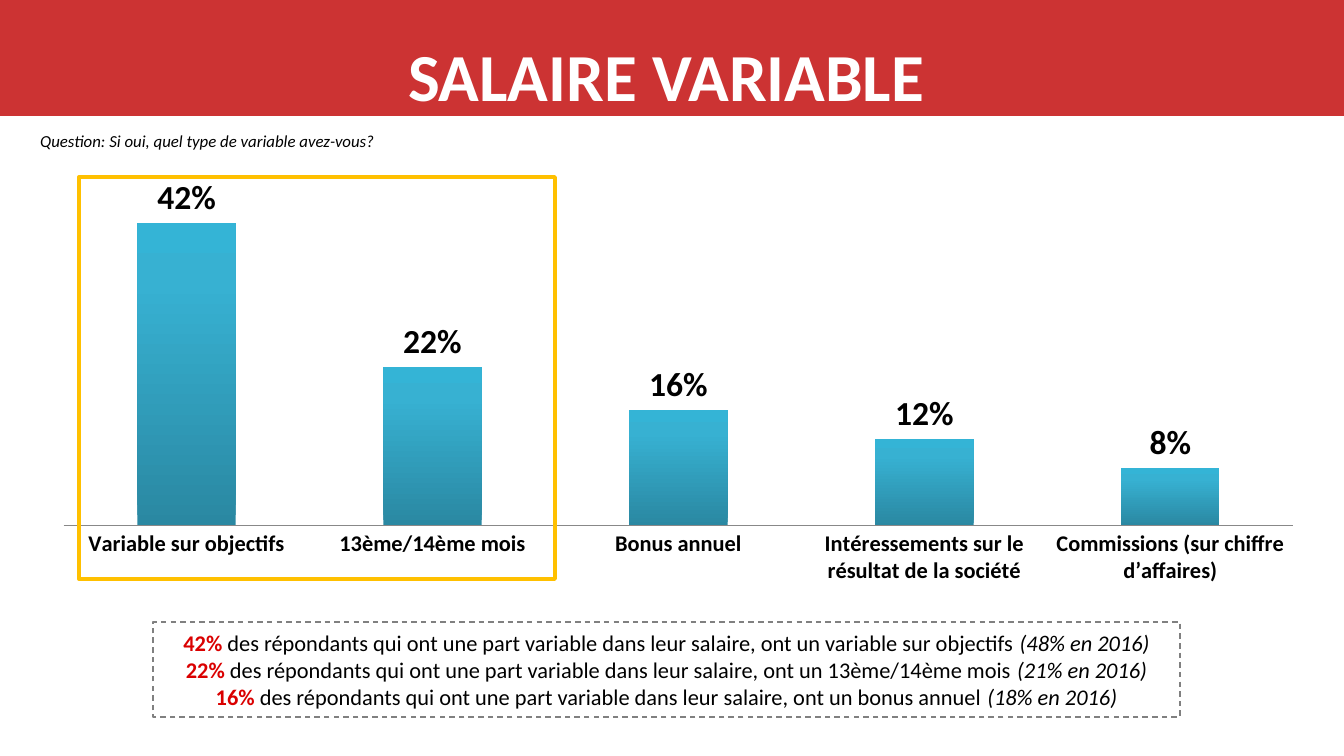
"""Build the slide on variable pay: a column chart with its key findings."""
import copy
from dataclasses import dataclass
from typing import Optional

import pptx
import pptx.chart.data
import pptx.dml.color
import pptx.enum.chart
import pptx.enum.dml
import pptx.enum.shapes
import pptx.enum.text
import pptx.oxml
import pptx.oxml.ns
import pptx.util

EMU_PER_PX = 914400 / 134.4
FONT = "Calibri"
RGBColor = pptx.dml.color.RGBColor
WHITE = RGBColor(0xFF, 0xFF, 0xFF)
BLACK = RGBColor(0x00, 0x00, 0x00)
BAND_RED = RGBColor(0xCC, 0x33, 0x33)
FIGURE_RED = RGBColor(0xDA, 0x00, 0x00)
GREY = RGBColor(0x80, 0x80, 0x80)
AXIS_GREY = RGBColor(0x88, 0x88, 0x88)
AMBER = RGBColor(0xFF, 0xC0, 0x00)
BAR_STOPS = (
    (0.0, RGBColor(0x2A, 0x88, 0xA2)),
    (0.8, RGBColor(0x37, 0xB1, 0xD2)),
    (1.0, RGBColor(0x34, 0xB4, 0xD6)),
)
CENTER = pptx.enum.text.PP_ALIGN.CENTER
LEFT = pptx.enum.text.PP_ALIGN.LEFT


@dataclass(frozen=True)
class Area:
    left: int
    top: int
    width: int
    height: int

    def emu(self) -> tuple:
        return tuple(px(v) for v in (self.left, self.top, self.width, self.height))


@dataclass(frozen=True)
class Finding:
    share: str
    statement: str
    earlier: str


SHARES = {
    "Variable sur objectifs": 0.42,
    "13ème/14ème mois": 0.22,
    "Bonus annuel": 0.16,
    "Intéressements sur le résultat de la société": 0.12,
    "Commissions (sur chiffre d’affaires)": 0.08,
}
COMMON_STATEMENT = "des répondants qui ont une part variable dans leur salaire, ont un "
FINDINGS = (
    Finding("42%", "variable sur objectifs", "(48% en 2016)"),
    Finding("22%", "13ème/14ème mois", "(21% en 2016)"),
    Finding("16%", "bonus annuel", "(18% en 2016)"),
)
PLOT_LAYOUT = {"x": 0.02, "y": 0.06, "w": 0.96, "h": 0.79}


def px(length: int) -> int:
    return round(length * EMU_PER_PX)


def style_font(font, size: int, color: RGBColor, bold: bool = False, italic: bool = False) -> None:
    font.name = FONT
    font.size = pptx.util.Pt(size)
    font.color.rgb = color
    font.bold = bold
    font.italic = italic


def add_rectangle(page, area: Area, fill: Optional[RGBColor] = None,
                  line: Optional[RGBColor] = None, weight: float = 0):
    box = page.shapes.add_shape(pptx.enum.shapes.MSO_SHAPE.RECTANGLE, *area.emu())
    box.shadow.inherit = False
    if fill is None:
        box.fill.background()
    else:
        box.fill.solid()
        box.fill.fore_color.rgb = fill
    if line is None:
        box.line.fill.background()
    else:
        box.line.color.rgb = line
        box.line.width = pptx.util.Pt(weight)
    return box


def add_text(page, area: Area, text: str, align, size: int, color: RGBColor,
             bold: bool = False, italic: bool = False) -> None:
    frame = page.shapes.add_textbox(*area.emu()).text_frame
    frame.word_wrap = True
    para = frame.paragraphs[0]
    para.text = text
    para.alignment = align
    style_font(para.font, size, color, bold, italic)


def fill_bars(series) -> None:
    fill = series.format.fill
    fill.gradient()
    fill.gradient_angle = 90
    stop_list = next(series._element.iter(pptx.oxml.ns.qn("a:gsLst")))
    stop_list.append(copy.deepcopy(stop_list[-1]))
    for stop, (position, color) in zip(fill.gradient_stops, BAR_STOPS):
        stop.color.rgb = color
        stop.position = position


def place_plot(chart) -> None:
    plot_area = next(chart._chartSpace.iter(pptx.oxml.ns.qn("c:plotArea")))
    for layout in plot_area.findall(pptx.oxml.ns.qn("c:layout")):
        plot_area.remove(layout)
    modes = "".join(f'<c:{axis}Mode val="edge"/>' for axis in "xy")
    values = "".join(f'<c:{name} val="{value}"/>' for name, value in PLOT_LAYOUT.items())
    plot_area.insert(0, pptx.oxml.parse_xml(
        f'<c:layout {pptx.oxml.ns.nsdecls("c")}><c:manualLayout>'
        f'<c:layoutTarget val="inner"/>{modes}{values}</c:manualLayout></c:layout>'))


def add_share_chart(page, area: Area) -> None:
    data = pptx.chart.data.CategoryChartData(number_format="0%")
    data.categories = list(SHARES)
    data.add_series("Series 1", list(SHARES.values()))
    chart = page.shapes.add_chart(
        pptx.enum.chart.XL_CHART_TYPE.COLUMN_CLUSTERED, *area.emu(), data).chart
    chart.has_legend = False
    chart.has_title = False
    style_font(chart.font, 18, BLACK)
    place_plot(chart)

    values = chart.value_axis
    values.minimum_scale = 0
    values.maximum_scale = 0.45
    values.has_major_gridlines = False
    values.visible = False
    categories = chart.category_axis
    categories.major_tick_mark = pptx.enum.chart.XL_TICK_MARK.NONE
    categories.format.line.color.rgb = AXIS_GREY
    categories.format.line.width = pptx.util.Pt(0.75)
    style_font(categories.tick_labels.font, 12, BLACK, bold=True)

    plot = chart.plots[0]
    plot.gap_width = 150
    plot.overlap = -25
    plot.vary_by_categories = False
    fill_bars(plot.series[0])
    plot.has_data_labels = True
    labels = plot.data_labels
    labels.show_value = True
    labels.number_format = "0%"
    labels.number_format_is_linked = False
    labels.position = pptx.enum.chart.XL_LABEL_POSITION.OUTSIDE_END
    style_font(labels.font, 18, BLACK, bold=True)


def add_findings(page, area: Area) -> None:
    box = add_rectangle(page, area, line=GREY, weight=0.75)
    box.line.dash_style = pptx.enum.dml.MSO_LINE.DASH
    frame = box.text_frame
    frame.word_wrap = True
    for index, finding in enumerate(FINDINGS):
        para = frame.add_paragraph() if index else frame.paragraphs[0]
        para.alignment = CENTER
        pieces = (
            (f"{finding.share} ", FIGURE_RED, True, False),
            (f"{COMMON_STATEMENT}{finding.statement} ", BLACK, False, False),
            (finding.earlier, BLACK, False, True),
        )
        for text, color, bold, italic in pieces:
            span = para.add_run()
            span.text = text
            style_font(span.font, 12, color, bold, italic)


def main() -> None:
    deck = pptx.Presentation()
    deck.slide_width, deck.slide_height = px(1344), px(756)
    page = deck.slides.add_slide(deck.slide_layouts[6])
    add_rectangle(page, Area(0, 0, 1344, 116), fill=BAND_RED)
    add_text(page, Area(238, 28, 857, 95), "SALAIRE VARIABLE", CENTER, 36, WHITE, bold=True)
    add_share_chart(page, Area(38, 177, 1281, 410))
    add_text(page, Area(27, 124, 672, 34), "Question: Si oui, quel type de variable avez-vous?",
             LEFT, 9, BLACK, italic=True)
    add_findings(page, Area(153, 622, 1027, 95))
    add_rectangle(page, Area(79, 177, 476, 402), line=AMBER, weight=2)
    deck.save("out.pptx")


if __name__ == "__main__":
    main()
